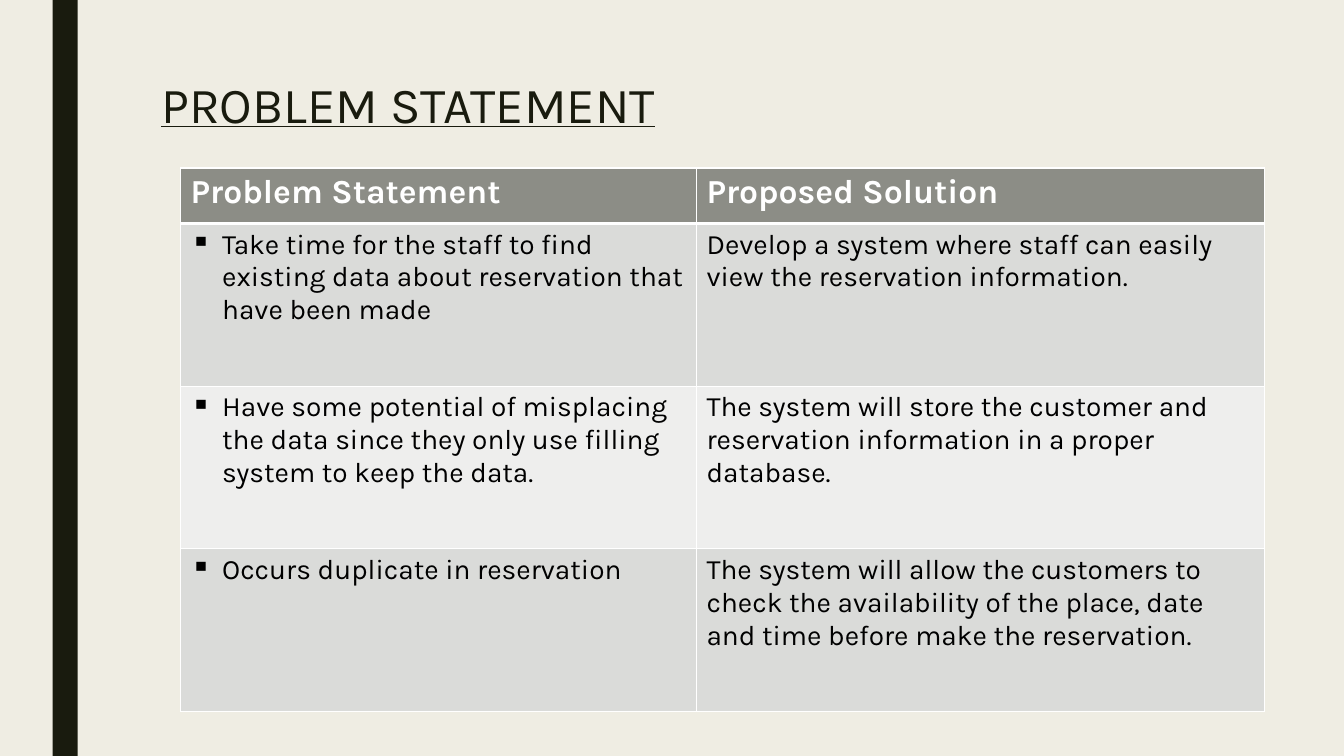
from lxml import etree
from pptx import Presentation
from pptx.dml.color import RGBColor
from pptx.enum.shapes import MSO_SHAPE
from pptx.enum.text import MSO_ANCHOR, MSO_AUTO_SIZE, PP_ALIGN
from pptx.oxml.ns import qn
from pptx.util import Pt

RECTANGLE = MSO_SHAPE.RECTANGLE
TOP = MSO_ANCHOR.TOP
LEFT = PP_ALIGN.LEFT
NO_AUTOFIT = MSO_AUTO_SIZE.NONE

FONT = "Karla"
DARK, WHITE, BLACK = "191B0E", "FFFFFF", "000000"
BACKGROUND, HEADER_FILL = "EFEDE3", "8C8D86"
BAND_FILLS = ["DADBD9", "EEEEED"]
COLUMN_WIDTHS = [368.5, 406]
HEADER_HEIGHT, BODY_HEIGHT = 39.6, 116.2
BULLET_INDENT = 22.5

HEADINGS = ("Problem Statement", "Proposed Solution")
PROBLEMS_AND_SOLUTIONS = [
    ("Take time for the staff to find existing data about reservation that have been made",
     "Develop a system where staff can easily view the reservation information."),
    ("Have some potential of misplacing the data since they only use filling system to keep the data.",
     "The system will store the customer and reservation information in a proper database."),
    ("Occurs duplicate in reservation",
     "The system will allow the customers to check the availability of the place, "
     "date and time before make the reservation."),
]


def set_fill(fill, color):
    fill.solid()
    fill.fore_color.rgb = RGBColor.from_string(color)


def format_text(paragraph, size, color, bold=False, underline=False):
    paragraph.alignment = LEFT
    for run in paragraph.runs:
        font = run.font
        font.name, font.size = FONT, Pt(size)
        font.bold, font.underline = bold, underline
        font.color.rgb = RGBColor.from_string(color)


def add_bullet(paragraph):
    properties = paragraph._p.get_or_add_pPr()
    properties.set("marL", str(Pt(BULLET_INDENT)))
    properties.set("indent", str(-Pt(BULLET_INDENT)))
    etree.SubElement(properties, qn("a:buChar"), char="▪")


def set_borders(cell, widths):
    """Draw white borders; widths are given for left, right, top and bottom."""
    properties = cell._tc.get_or_add_tcPr()
    for position, (side, width) in enumerate(zip("LRTB", widths)):
        line = etree.Element(qn(f"a:ln{side}"), w=str(Pt(width)))
        fill = etree.SubElement(line, qn("a:solidFill"))
        etree.SubElement(fill, qn("a:srgbClr"), val=WHITE)
        properties.insert(position, line)


def add_side_bar(slide):
    bar = slide.shapes.add_shape(RECTANGLE, Pt(37.5), Pt(0), Pt(18), Pt(540))
    bar.shadow.inherit = False
    set_fill(bar.fill, DARK)
    bar.line.fill.background()


def set_title(slide, text):
    title = slide.shapes.title
    title.left, title.top, title.width, title.height = Pt(108), Pt(54), Pt(756), Pt(116.6)
    frame = title.text_frame
    frame.text = text
    frame.vertical_anchor = TOP
    frame.auto_size = NO_AUTOFIT
    frame.paragraphs[0].line_spacing = 0.89
    format_text(frame.paragraphs[0], 36, DARK, underline=True)


def add_solution_table(slide):
    rows = [HEADINGS] + PROBLEMS_AND_SOLUTIONS
    heights = [HEADER_HEIGHT] + [BODY_HEIGHT] * len(PROBLEMS_AND_SOLUTIONS)
    table = slide.shapes.add_table(
        len(rows), len(HEADINGS), Pt(129), Pt(120),
        Pt(sum(COLUMN_WIDTHS)), Pt(sum(heights))).table
    for column, width in zip(table.columns, COLUMN_WIDTHS):
        column.width = Pt(width)
    for r, (texts, height) in enumerate(zip(rows, heights)):
        table.rows[r].height = Pt(height)
        is_header = r == 0
        for c, text in enumerate(texts):
            cell = table.cell(r, c)
            cell.text_frame.text = text
            paragraph = cell.text_frame.paragraphs[0]
            if is_header:
                format_text(paragraph, 24, WHITE, bold=True)
            else:
                format_text(paragraph, 20, BLACK)
                if c == 0:
                    add_bullet(paragraph)
            set_fill(cell.fill, HEADER_FILL if is_header else BAND_FILLS[(r - 1) % 2])
            set_borders(cell, (1, 1, 3 if r == 1 else 1, 3 if is_header else 1))


def main():
    presentation = Presentation()
    presentation.slide_width, presentation.slide_height = Pt(960), Pt(540)
    slide = presentation.slides.add_slide(presentation.slide_layouts[5])
    set_fill(slide.background.fill, BACKGROUND)
    add_side_bar(slide)
    set_title(slide, "PROBLEM STATEMENT")
    add_solution_table(slide)
    presentation.save("out.pptx")


if __name__ == "__main__":
    main()
